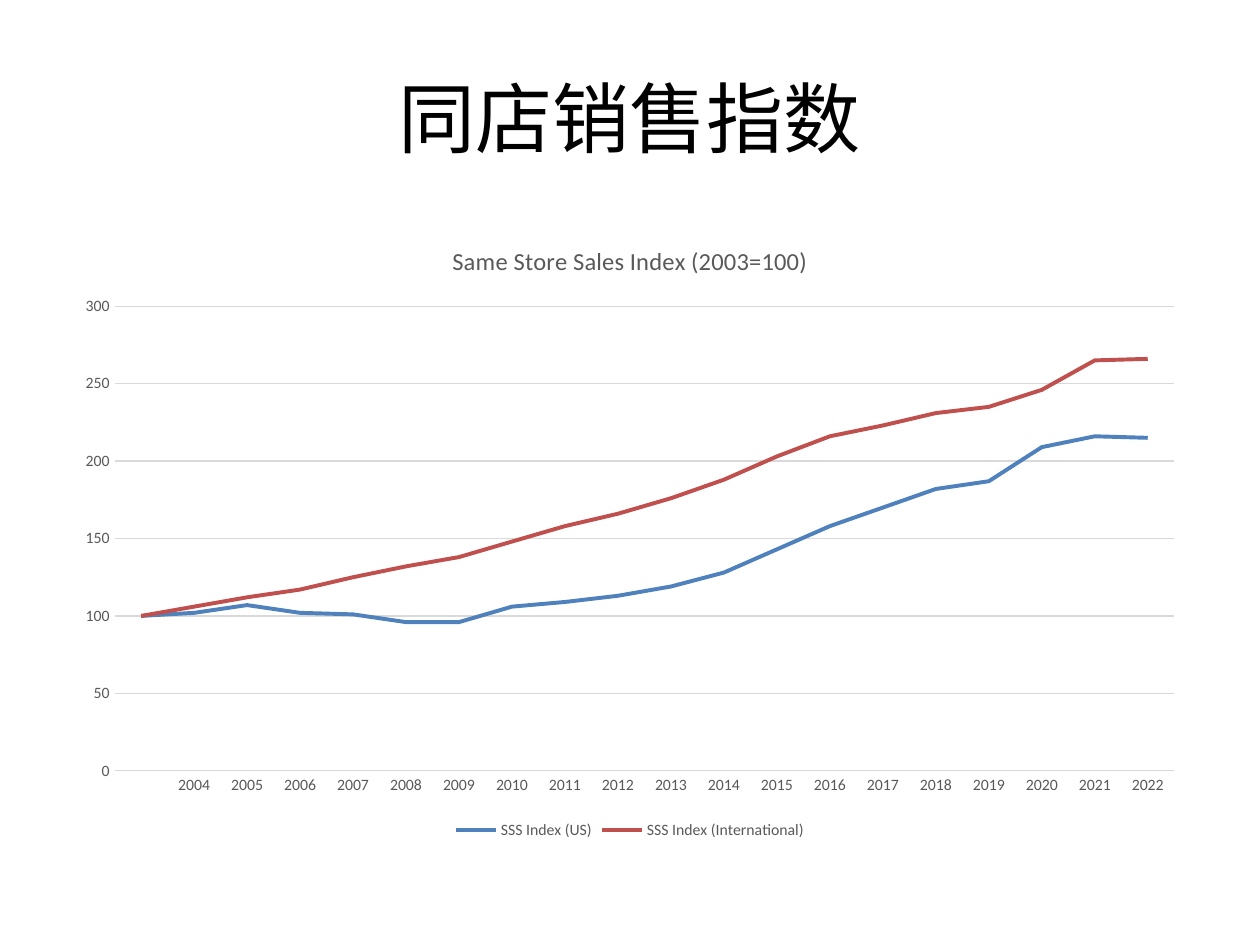
from pptx import Presentation
from pptx.chart.data import CategoryChartData
from pptx.dml.color import RGBColor
from pptx.enum import chart as ch, text
from pptx.util import Inches, Pt

GREY, GRID = "595959", "D9D9D9"


def rgb(value):
    return RGBColor.from_string(value)


def set_font(font, size, color):
    font.name = "Calibri"
    font.size = Pt(size)
    font.bold = False
    font.color.rgb = rgb(color)


prs = Presentation()
prs.slide_width, prs.slide_height = Inches(10), Inches(7.5)
s = prs.slides.add_slide(prs.slide_layouts[6])

# Heading
sp = s.shapes.add_textbox(Inches(0.5), Inches(0.3), Inches(9), Inches(1.25))
tf = sp.text_frame
tf.word_wrap = True
tf.vertical_anchor = text.MSO_ANCHOR.MIDDLE
tf.text = "同店销售指数"
p = tf.paragraphs[0]
p.alignment = text.PP_ALIGN.CENTER
set_font(p.runs[0].font, 44, "000000")

# Index lines, with an unlabelled base year
series = [
    ("SSS Index (US)", "4F81BD",
     [100, 102, 107, 102, 101, 96, 96, 106, 109, 113,
      119, 128, 143, 158, 170, 182, 187, 209, 216, 215]),
    ("SSS Index (International)", "C0504D",
     [100, 106, 112, 117, 125, 132, 138, 148, 158, 166,
      176, 188, 203, 216, 223, 231, 235, 246, 265, 266]),
]
data = CategoryChartData()
data.categories = [""] + [str(year) for year in range(2004, 2023)]
for name, _, values in series:
    data.add_series(name, values)

chart = s.shapes.add_chart(ch.XL_CHART_TYPE.LINE, Inches(0.5), Inches(1.75),
                           Inches(9), Inches(4.95), data).chart
set_font(chart.font, 10, "000000")

chart.has_title = True
tf = chart.chart_title.text_frame
tf.text = "Same Store Sales Index (2003=100)"
set_font(tf.paragraphs[0].runs[0].font, 14, GREY)
chart.chart_title.include_in_layout = False

chart.has_legend = True
chart.legend.position = ch.XL_LEGEND_POSITION.BOTTOM
chart.legend.include_in_layout = False
set_font(chart.legend.font, 9, GREY)

for axis in (chart.category_axis, chart.value_axis):
    axis.major_tick_mark = axis.minor_tick_mark = ch.XL_TICK_MARK.NONE
    set_font(axis.tick_labels.font, 9, GREY)

value_axis = chart.value_axis
value_axis.minimum_scale, value_axis.maximum_scale = 0, 300
value_axis.major_unit = 50
value_axis.has_major_gridlines = True
value_axis.format.line.fill.background()
for line in (chart.category_axis.format.line,
             value_axis.major_gridlines.format.line):
    line.color.rgb = rgb(GRID)
    line.width = Pt(0.75)

plot = chart.plots[0]
plot.vary_by_categories = False
for ser, (_, color, _) in zip(plot.series, series):
    ser.smooth = False
    ser.marker.style = ch.XL_MARKER_STYLE.NONE
    ser.format.line.color.rgb = rgb(color)
    ser.format.line.width = Pt(2.25)

prs.save("out.pptx")
